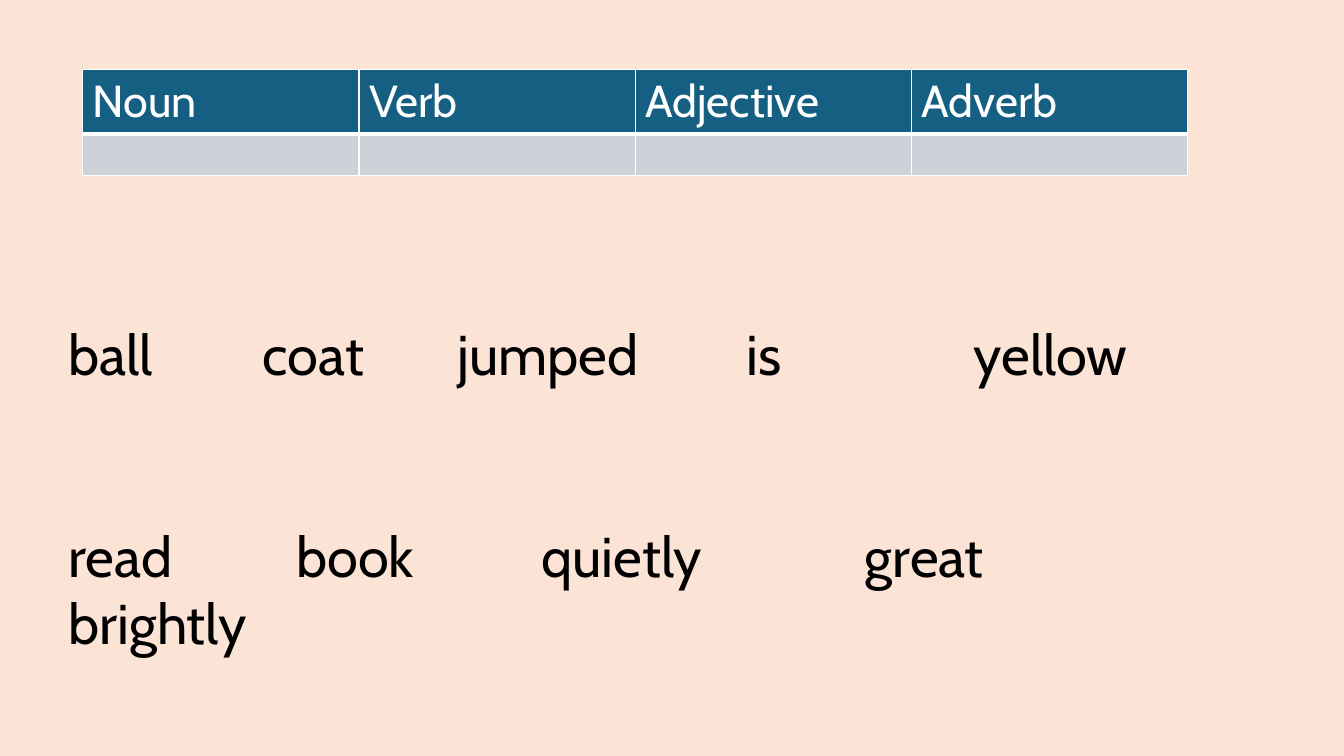
from lxml.etree import SubElement
from pptx import Presentation
from pptx.dml.color import RGBColor
from pptx.oxml.ns import qn
from pptx.util import Inches, Pt

FONT = "Cabin"
HEADINGS = ["Noun", "Verb", "Adjective", "Adverb"]
ROW_HEIGHTS = [0.64, 0.41]
ROW_FILLS = ["156082", "CCD2D8"]
# Each line of the word bank: words, and the tab stops (inches) they stand at
WORD_LINES = [
    (["ball", "coat", "jumped", "is", "yellow"], [1.93, 3.86, 6.73, 8.98]),
    (["read", "book", "quietly", "great"], [2.26, 4.69, 7.9]),
]
LAST_WORD = "brightly"


def colour(value):
    return RGBColor.from_string(value)


def add_span(para, text, size, hue):
    span = para.add_run()
    span.text = text
    span.font.name = FONT
    span.font.size = Pt(size)
    span.font.bold = False
    span.font.color.rgb = colour(hue)


def add_borders(cell, bottom_width):
    properties = cell._tc.get_or_add_tcPr()
    for side, width in zip("LRTB", (1, 1, 1, bottom_width)):
        line = SubElement(properties, qn(f"a:ln{side}"), w=str(Pt(width)))
        fill = SubElement(line, qn("a:solidFill"))
        SubElement(fill, qn("a:srgbClr"), val="FFFFFF")


def add_tab_stops(para, stops):
    tab_list = SubElement(para._p.get_or_add_pPr(), qn("a:tabLst"))
    for stop in stops:
        SubElement(tab_list, qn("a:tab"), pos=str(Inches(stop)), algn="l")


def add_word_class_table(page, left, top, width):
    frame = page.shapes.add_table(
        len(ROW_HEIGHTS), len(HEADINGS), Inches(left), Inches(top),
        Inches(width), Inches(sum(ROW_HEIGHTS)))
    table = frame.table
    for column in table.columns:
        column.width = Inches(width / len(HEADINGS))
    for row, height, fill in zip(table.rows, ROW_HEIGHTS, ROW_FILLS):
        row.height = Inches(height)
        for cell in row.cells:
            add_borders(cell, 3 if fill == ROW_FILLS[0] else 1)
            cell.fill.solid()
            cell.fill.fore_color.rgb = colour(fill)
    for cell, heading in zip(table.rows[0].cells, HEADINGS):
        add_span(cell.text_frame.paragraphs[0], heading, 32, "FFFFFF")


def add_word_bank(page, left, top, width, height):
    box = page.shapes.add_textbox(
        Inches(left), Inches(top), Inches(width), Inches(height))
    text = box.text_frame
    text.word_wrap = True
    for index, (words, stops) in enumerate(WORD_LINES):
        para = text.add_paragraph() if index else text.paragraphs[0]
        if index:
            para.space_before = Pt(96)
        add_tab_stops(para, stops)
        add_span(para, "\t".join(words), 40, "000000")
    # The last word stands on a line of its own
    para.add_line_break()
    add_span(para, LAST_WORD, 40, "000000")


def main():
    deck = Presentation()
    deck.slide_width, deck.slide_height = Inches(13.33), Inches(7.5)
    page = deck.slides.add_slide(deck.slide_layouts[6])
    page.background.fill.solid()
    page.background.fill.fore_color.rgb = colour("FBE3D6")
    add_word_class_table(page, 0.82, 0.69, 10.96)
    add_word_bank(page, 0.58, 3.12, 12.18, 2.79)
    deck.save("out.pptx")


if __name__ == "__main__":
    main()
